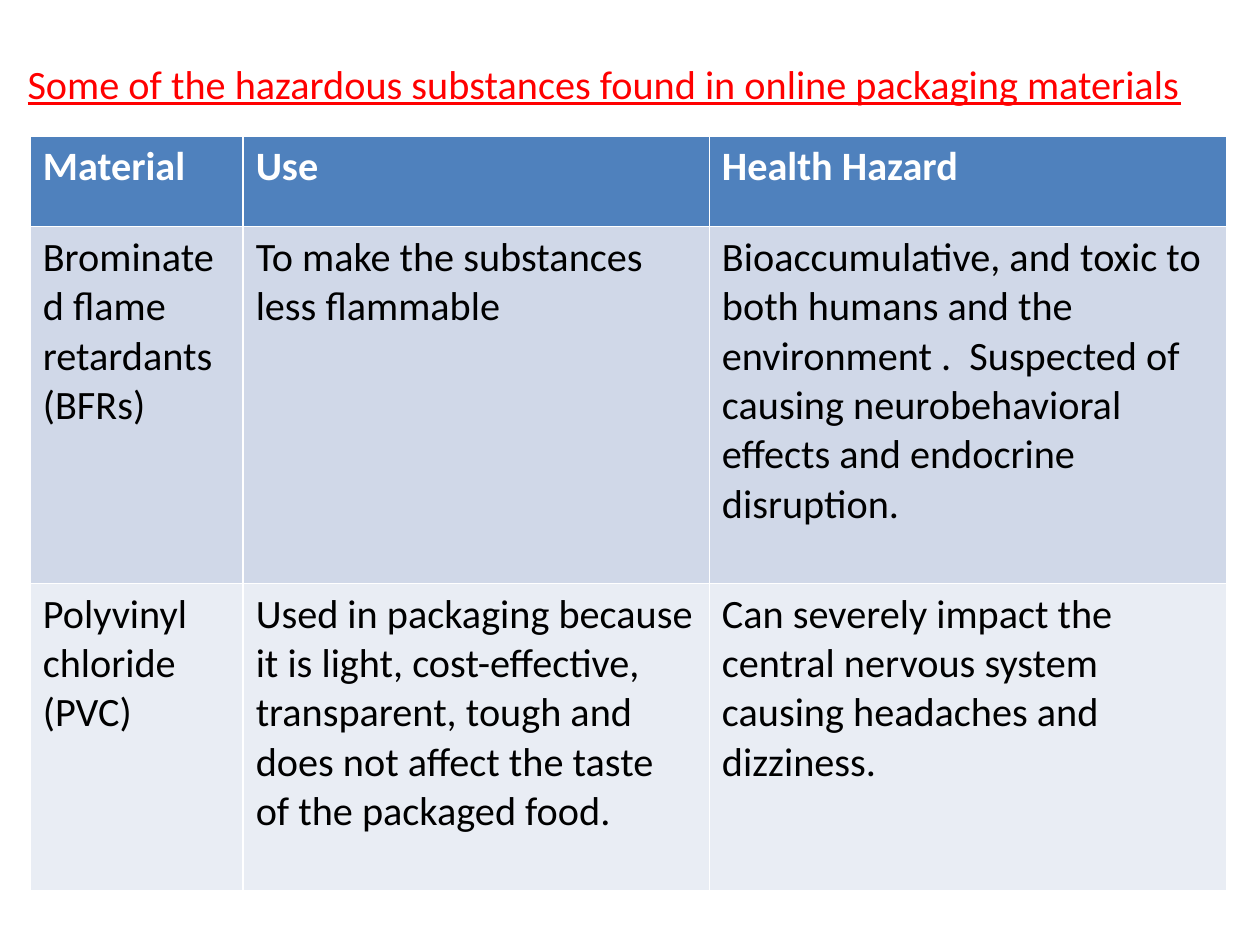
"""Builds a slide with a table of hazardous substances in packaging."""
from pptx import Presentation
from pptx.dml.color import RGBColor
from pptx.enum.text import MSO_AUTO_SIZE as AutoSize
from pptx.util import Inches, Pt

RED = RGBColor(0xFF, 0x00, 0x00)
WHITE = RGBColor(0xFF, 0xFF, 0xFF)
BLACK = RGBColor(0x00, 0x00, 0x00)
HEADER_BLUE = RGBColor(0x4F, 0x81, 0xBD)
BAND_DARK = RGBColor(0xD0, 0xD8, 0xE8)
BAND_LIGHT = RGBColor(0xE9, 0xED, 0xF4)

HEADING = "Some of the hazardous substances found in online packaging materials"
SUBSTANCES = [
    ("Material", "Use", "Health Hazard"),
    (
        "Brominated flame retardants (BFRs)",
        "To make the substances less flammable",
        "Bioaccumulative, and toxic to both humans and the environment .  "
        "Suspected of causing neurobehavioral effects and endocrine disruption.",
    ),
    (
        "Polyvinyl chloride (PVC)",
        "Used in packaging because it is light, cost-effective, transparent, "
        "tough and does not affect the taste of the packaged food.",
        "Can severely impact the central nervous system causing headaches "
        "and dizziness.",
    ),
]
COLUMN_WIDTHS = [1.69, 3.7, 4.11]
ROW_HEIGHTS = [0.72, 2.83, 2.44]
ROW_FILLS = [HEADER_BLUE, BAND_DARK, BAND_LIGHT]


def add_run(paragraph, text, color, bold=False, underline=False):
    run = paragraph.add_run()
    run.text = text
    run.font.name = "Calibri"
    run.font.size = Pt(23)
    run.font.color.rgb = color
    run.font.bold = bold
    run.font.underline = underline


def add_heading(slide):
    heading = slide.shapes.add_textbox(
        Inches(0.12), Inches(0.23), Inches(9.88), Inches(0.62)
    ).text_frame
    heading.word_wrap = True
    heading.auto_size = AutoSize.SHAPE_TO_FIT_TEXT
    line = heading.paragraphs[0]
    line.line_spacing = 1.5
    add_run(line, HEADING, RED, underline=True)


def add_substances(slide):
    substances = slide.shapes.add_table(
        len(SUBSTANCES), len(COLUMN_WIDTHS), Inches(0.24), Inches(1.08),
        Inches(sum(COLUMN_WIDTHS)), Inches(sum(ROW_HEIGHTS)),
    ).table
    for column, width in zip(substances.columns, COLUMN_WIDTHS):
        column.width = Inches(width)
    for index, (row, height) in enumerate(zip(substances.rows, ROW_HEIGHTS)):
        row.height = Inches(height)
        is_header = index == 0
        for cell, text in zip(row.cells, SUBSTANCES[index]):
            cell.fill.solid()
            cell.fill.fore_color.rgb = ROW_FILLS[index]
            color = WHITE if is_header else BLACK
            add_run(cell.text_frame.paragraphs[0], text, color, bold=is_header)


def main():
    deck = Presentation()
    deck.slide_width, deck.slide_height = Inches(10), Inches(7.5)
    slide = deck.slides.add_slide(deck.slide_layouts[6])
    add_heading(slide)
    add_substances(slide)
    deck.save("out.pptx")


if __name__ == "__main__":
    main()
